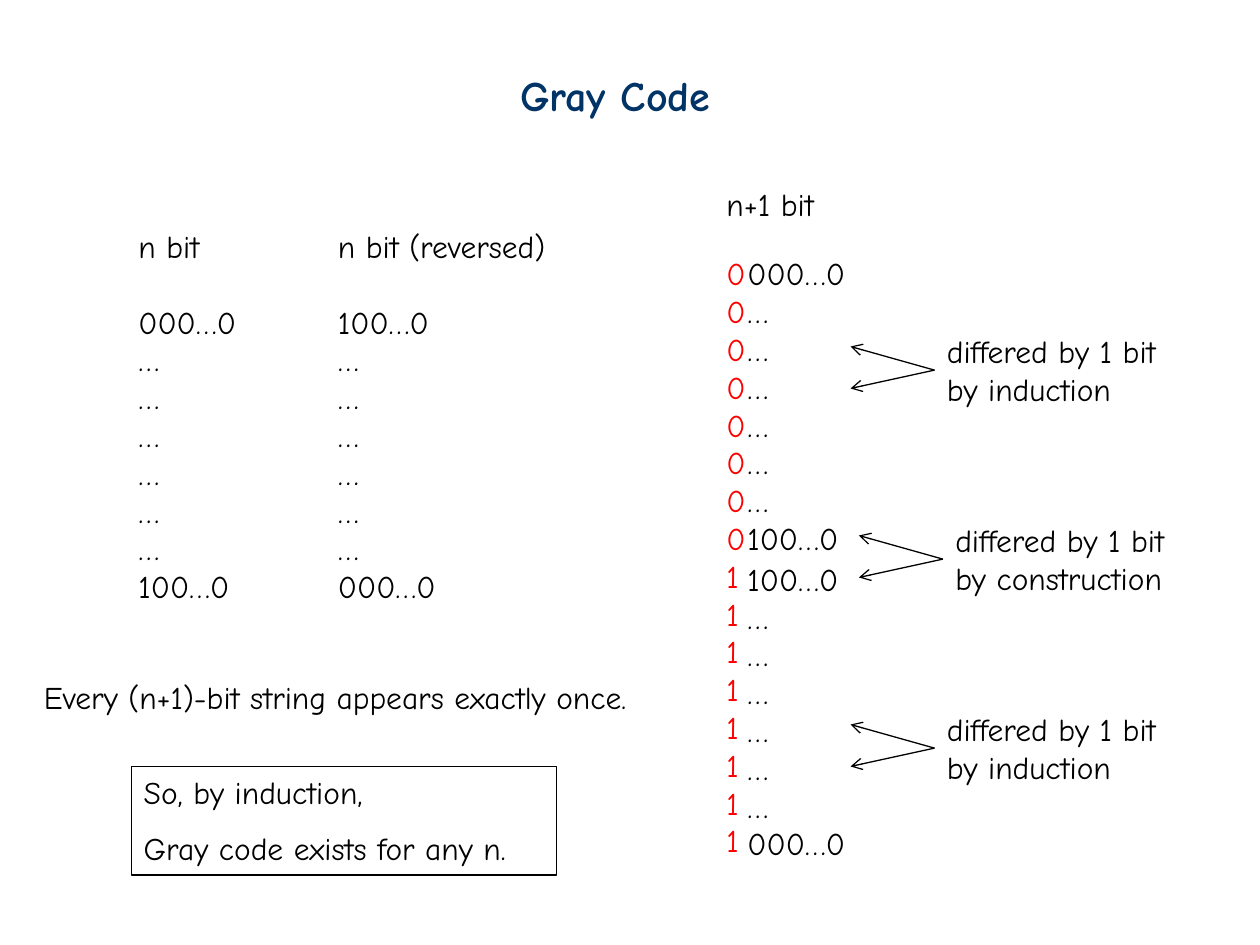
from lxml.etree import SubElement
from pptx import Presentation
from pptx.dml.color import RGBColor
from pptx.enum.shapes import MSO_CONNECTOR, MSO_SHAPE
from pptx.enum.text import MSO_ANCHOR, PP_ALIGN
from pptx.oxml.ns import qn
from pptx.util import Pt

FONT = "Comic Neue"
BLACK = RGBColor(0, 0, 0)
RED = RGBColor(255, 0, 0)
NAVY = RGBColor(0, 0x33, 0x66)
GAP = 21.8  # one line of 18 point text

TITLE = "Gray Code"
DOTS = ["…"] * 6
UP = ["000…0", *DOTS, "100…0"]
DOWN = UP[::-1]

# left, top, width, height, lines, colour
TEXTS = [
    (420, 141.8, 114, 181.4, UP, BLACK),
    (420, 316.3, 90, 181.4, DOWN, BLACK),
    (408, 141.8, 26, 356.4, ["0"] * 8 + ["1"] * 8, RED),
    (408, 102, 71, 29, ["n+1 bit"], BLACK),
    (18, 384, 383, 29, ["Every (n+1)-bit string appears exactly once."], BLACK),
]
# left, width, heading, codes
LISTS = [(72, 73, "n bit", UP), (186, 148, "n bit (reversed)", DOWN)]
# left, top, reason
NOTES = [
    (534, 186, "by induction"),
    (538.8, 294, "by construction"),
    (534, 402, "by induction"),
]
CLAIM = ["So, by induction,", "Gray code exists for any n."]


def write(shape, lines, color=BLACK, size=18, bold=False):
    frame = shape.text_frame
    frame.text = "\n".join(lines)
    frame.word_wrap = True
    frame.vertical_anchor = MSO_ANCHOR.TOP
    for para in frame.paragraphs:
        para.alignment = PP_ALIGN.LEFT
        for run in para.runs:
            run.font.name = FONT
            run.font.size = Pt(size)
            run.font.bold = bold
            run.font.color.rgb = color


def add_text(slide, left, top, width, height, lines, color=BLACK):
    box = slide.shapes.add_textbox(Pt(left), Pt(top), Pt(width), Pt(height))
    write(box, lines, color)
    return box


def add_arrow(slide, box, x, y):
    """Point from the middle of the box's left side to x, y."""
    line = slide.shapes.add_connector(MSO_CONNECTOR.STRAIGHT, 0, 0, Pt(x), Pt(y))
    line.begin_connect(box, 1)
    line.line.color.rgb = BLACK
    line.line.width = Pt(0.75)
    props = line._element.spPr
    SubElement(props.find(qn("a:ln")), qn("a:tailEnd"), type="arrow")
    SubElement(props, qn("a:effectLst"))


def main():
    deck = Presentation()
    deck.slide_width, deck.slide_height = Pt(720), Pt(540)
    slide = deck.slides.add_slide(deck.slide_layouts[5])

    title = slide.shapes.title
    title.left, title.top, title.width, title.height = Pt(290), Pt(36), Pt(135), Pt(37)
    write(title, [TITLE], NAVY, 24, True)

    for left, width, head, codes in LISTS:
        box = add_text(slide, left, 126, width, 225, [head, *codes])
        box.text_frame.paragraphs[0].space_after = Pt(GAP)

    for item in TEXTS:
        add_text(slide, *item)

    for left, top, why in NOTES:
        box = add_text(slide, left, top, 157, 51, ["differed by 1 bit", why])
        for drop in (12, 36):
            add_arrow(slide, box, left - 48, top + drop)

    claim = slide.shapes.add_shape(
        MSO_SHAPE.RECTANGLE, Pt(75), Pt(438), Pt(243), Pt(62))
    claim.shadow.inherit = False
    claim.fill.background()
    claim.line.color.rgb = BLACK
    claim.line.width = Pt(0.75)
    write(claim, CLAIM)
    claim.text_frame.paragraphs[1].line_spacing = 1.5

    deck.save("out.pptx")


if __name__ == "__main__":
    main()
